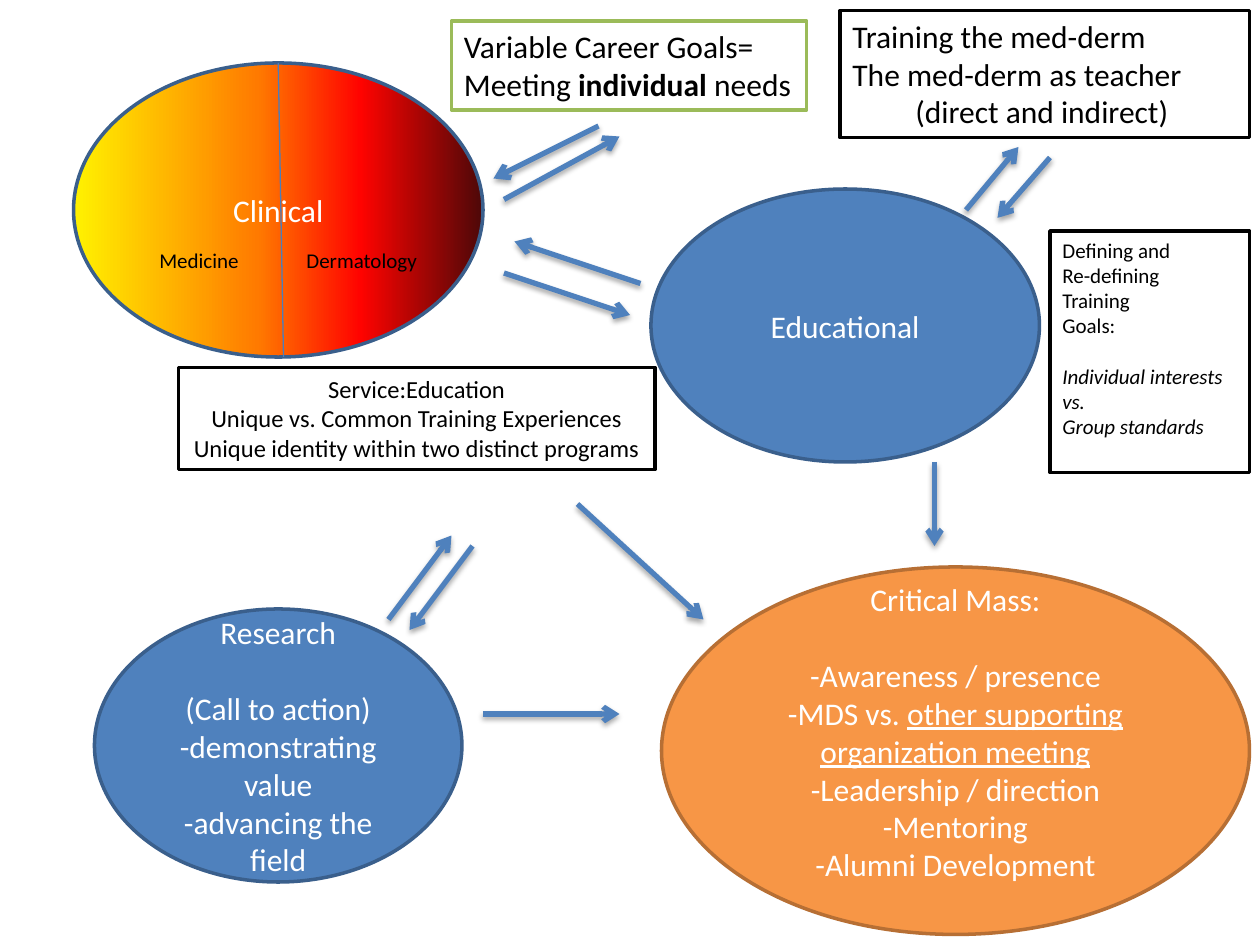
from dataclasses import dataclass

from lxml import etree
from pptx import Presentation
from pptx.dml.color import RGBColor
from pptx.enum.shapes import MSO_CONNECTOR, MSO_SHAPE
from pptx.enum.text import MSO_ANCHOR, MSO_AUTO_SIZE, PP_ALIGN
from pptx.oxml.ns import qn
from pptx.util import Pt

STRAIGHT = MSO_CONNECTOR.STRAIGHT
OVAL, RECT = MSO_SHAPE.OVAL, MSO_SHAPE.RECTANGLE
TOP, MIDDLE = MSO_ANCHOR.TOP, MSO_ANCHOR.MIDDLE
LEFT, CENTER = PP_ALIGN.LEFT, PP_ALIGN.CENTER
GROW, FIXED = MSO_AUTO_SIZE.SHAPE_TO_FIT_TEXT, MSO_AUTO_SIZE.NONE

FONT = "Calibri"
WHITE = RGBColor(0xFF, 0xFF, 0xFF)
BLACK = RGBColor(0, 0, 0)
BLUE = RGBColor(0x4F, 0x81, 0xBD)
DARK_BLUE = RGBColor(0x3A, 0x5F, 0x8C)
DIVIDER_BLUE = RGBColor(0x4B, 0x7E, 0xBC)
ORANGE = RGBColor(0xF7, 0x96, 0x46)
DARK_ORANGE = RGBColor(0xB7, 0x6F, 0x34)
GREEN = RGBColor(0x9B, 0xBB, 0x59)
CLINICAL_STOPS = (
    (0, RGBColor(0xFF, 0xF2, 0x00)),
    (45, RGBColor(0xFF, 0x7A, 0x00)),
    (70, RGBColor(0xFF, 0x03, 0x00)),
    (100, RGBColor(0x4D, 0x08, 0x08)),
)


@dataclass(frozen=True)
class Run:
    text: str
    bold: bool = False
    italic: bool = False
    underline: bool = False


@dataclass(frozen=True)
class Para:
    runs: tuple[Run, ...]
    before: float = 0


@dataclass(frozen=True)
class Oval:
    box: tuple[float, ...]
    paras: tuple[Para, ...]
    fill: RGBColor = BLUE
    line: RGBColor = DARK_BLUE
    bottom: float = 3.6


@dataclass(frozen=True)
class Note:
    box: tuple[float, ...]
    paras: tuple[Para, ...]
    size: float
    line: RGBColor = BLACK
    align: PP_ALIGN = LEFT
    wrap: bool = False


def plain(*lines: str) -> tuple[Para, ...]:
    return tuple(Para((Run(line),)) for line in lines)


OVALS = (
    Oval((42, 36, 234, 168), plain("Clinical")),
    Oval((372, 108, 222, 156), plain("Educational")),
    Oval((54, 348, 210, 156), (
        *plain("Research"),
        Para((Run("(Call to action)"),), 22),
        *plain("-demonstrating value", "-advancing the field"),
    )),
    Oval((378, 324, 336, 210), (
        *plain("Critical Mass:"),
        Para((Run("-Awareness / presence"),), 22),
        Para((Run("-MDS vs. "),
              Run("other supporting organization meeting", underline=True))),
        *plain("-Leadership / direction", "-Mentoring", "-Alumni Development"),
    ), ORANGE, DARK_ORANGE, bottom=25.6),
)

NOTES = (
    Note((480, 6, 234, 72.7),
         plain("Training the med-derm", "The med-derm as teacher",
               "\t(direct and indirect)"), 18),
    Note((102, 210, 272.2, 58.3),
         plain("Service:Education", "Unique vs. Common Training Experiences",
               "Unique identity within two distinct programs"),
         14, align=CENTER),
    Note((600, 132, 114, 138), (
        *plain("Defining and", "Re-defining", "Training", "Goals:"),
        Para((Run("Individual interests vs.", italic=True),), 14.6),
        Para((Run("Group standards", italic=True),)),
    ), 12, wrap=True),
    Note((258, 12, 203, 50.9), (
        *plain("Variable Career Goals="),
        Para((Run("Meeting "), Run("individual", bold=True), Run(" needs"))),
    ), 18, line=GREEN),
)

LABELS = (("Medicine", (84, 138, 60.5, 21.8)),
          ("Dermatology", (168, 138, 78.5, 21.8)))

ARROWS = (
    (600, 90, 570, 124.5), (552, 120, 582, 84),
    (288, 156, 360, 180), (366, 162, 294, 138),
    (222, 354, 258, 306), (270, 312, 234, 360),
    (276, 408, 354, 408), (330, 288, 402, 354), (534, 264, 534, 312),
    (288, 114, 354, 78), (342, 72, 282, 102),
)


def write(sp, paras, *, size, color=BLACK, align=LEFT, anchor=TOP,
          wrap=True, auto=FIXED, bottom=3.6) -> None:
    tf = sp.text_frame
    tf.word_wrap, tf.auto_size, tf.vertical_anchor = wrap, auto, anchor
    tf.margin_bottom = Pt(bottom)
    for i, para in enumerate(paras):
        p = tf.paragraphs[0] if i == 0 else tf.add_paragraph()
        p.alignment = align
        if para.before:
            p.space_before = Pt(para.before)
        for run in para.runs:
            r = p.add_run()
            r.text = run.text
            f = r.font
            f.name, f.size, f.color.rgb = FONT, Pt(size), color
            f.bold, f.italic, f.underline = run.bold, run.italic, run.underline


def add_shape(slide, kind, box, fill: RGBColor, line: RGBColor):
    sp = slide.shapes.add_shape(kind, *map(Pt, box))
    sp.shadow.inherit = False
    sp.fill.solid()
    sp.fill.fore_color.rgb = fill
    sp.line.color.rgb = line
    sp.line.width = Pt(2)
    return sp


def set_gradient(sp, stops) -> None:
    """Fill the shape from left to right with (percent, colour) stops."""
    sp.fill.gradient()
    sp.fill.gradient_angle = 0
    gs_list = sp._element.spPr.find(qn("a:gradFill")).find(qn("a:gsLst"))
    for gs in list(gs_list):
        gs_list.remove(gs)
    for percent, color in stops:
        gs = etree.SubElement(gs_list, qn("a:gs"), pos=str(percent * 1000))
        etree.SubElement(gs, qn("a:srgbClr"), val=str(color))


def add_line(slide, ends, color: RGBColor, width: float):
    """Draw a straight line; return it with its empty effect list."""
    cx = slide.shapes.add_connector(STRAIGHT, *map(Pt, ends))
    cx.line.color.rgb = color
    cx.line.width = Pt(width)
    return cx, etree.SubElement(cx._element.spPr, qn("a:effectLst"))


def add_arrow(slide, ends) -> None:
    cx, effects = add_line(slide, ends, BLUE, 3)
    ln = cx._element.spPr.find(qn("a:ln"))
    etree.SubElement(ln, qn("a:tailEnd"), type="arrow")
    shadow = etree.SubElement(effects, qn("a:outerShdw"), blurRad=str(Pt(3.1)),
                              dist=str(Pt(1.8)), dir="5400000", rotWithShape="0")
    black = etree.SubElement(shadow, qn("a:srgbClr"), val=str(BLACK))
    etree.SubElement(black, qn("a:alpha"), val="35000")


def main() -> None:
    prs = Presentation()
    prs.slide_width, prs.slide_height = Pt(720), Pt(540)
    slide = prs.slides.add_slide(prs.slide_layouts[6])

    ovals = []
    for oval in OVALS:
        sp = add_shape(slide, OVAL, oval.box, oval.fill, oval.line)
        write(sp, oval.paras, size=18, color=WHITE, align=CENTER,
              anchor=MIDDLE, bottom=oval.bottom)
        ovals.append(sp)
    set_gradient(ovals[0], CLINICAL_STOPS)

    for ends in ARROWS:
        add_arrow(slide, ends)
    add_line(slide, (159, 36, 162, 204), DIVIDER_BLUE, 0.75)

    for text, box in LABELS:
        tb = slide.shapes.add_textbox(*map(Pt, box))
        write(tb, plain(text), size=12, wrap=False, auto=GROW)
    for note in NOTES:
        sp = add_shape(slide, RECT, note.box, WHITE, note.line)
        write(sp, note.paras, size=note.size, align=note.align,
              wrap=note.wrap, auto=FIXED if note.wrap else GROW)

    prs.save("out.pptx")


if __name__ == "__main__":
    main()
